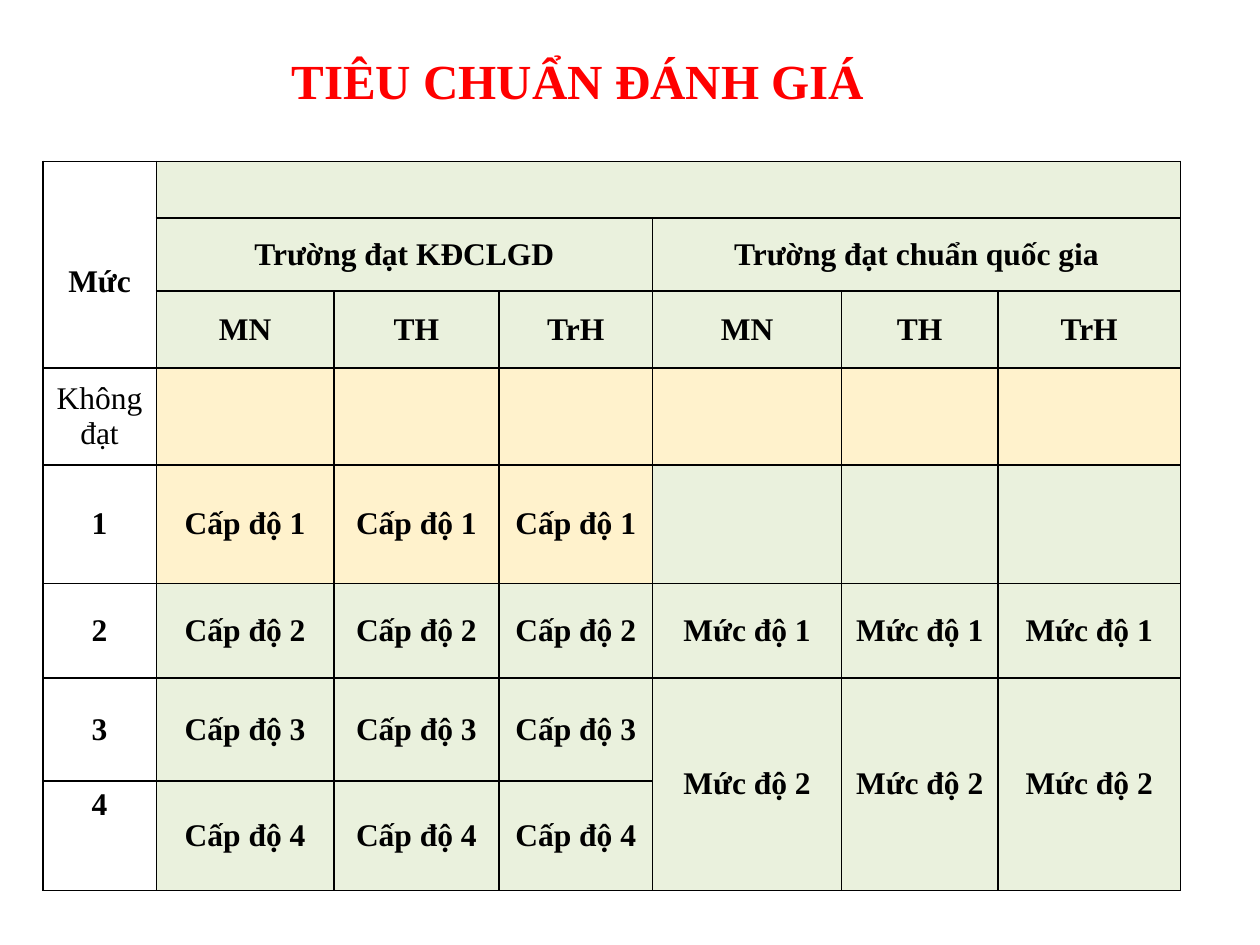
"""Build the slide with the table of school assessment standards."""
from dataclasses import dataclass
from typing import Any, NamedTuple

from lxml.etree import SubElement
from pptx import Presentation
from pptx.dml.color import RGBColor
from pptx.enum.text import MSO_ANCHOR, PP_ALIGN
from pptx.oxml.ns import qn
from pptx.util import Inches, Pt


@dataclass(frozen=True)
class Theme:
    face: str = "Times New Roman"
    head: Any = Pt(28)
    body: Any = Pt(18)
    rule: Any = Pt(1)
    red: str = "FF0000"
    ink: str = "000000"
    green: str = "EAF1DD"
    cream: str = "FFF2CC"


class Span(NamedTuple):
    row: int
    col: int
    rows: int
    cols: int


class Pad(NamedTuple):
    left: float = 0.07
    top: float = 0
    right: float = 0.07
    bottom: float = 0


THEME = Theme()
WIDTHS = (0.9, 1.41, 1.31, 1.22, 1.5, 1.24, 1.45)
HEIGHTS = (0.45, 0.58, 0.61, 0.77, 0.94, 0.75, 0.82, 0.87)
LEVELS = ["MN", "TH", "TrH"]
GAP = [""] * 3
ROWS = [
    ["Mức", *GAP, *GAP],
    ["", "Trường đạt KĐCLGD", "", "", "Trường đạt chuẩn quốc gia", "", ""],
    ["", *LEVELS, *LEVELS],
    ["Không đạt", *GAP, *GAP],
    ["1", *["Cấp độ 1"] * 3, *GAP],
    ["2", *["Cấp độ 2"] * 3, *["Mức độ 1"] * 3],
    ["3", *["Cấp độ 3"] * 3, *["Mức độ 2"] * 3],
    ["4", *["Cấp độ 4"] * 3, *GAP],
]
SPANS = [Span(0, 0, 3, 1), Span(0, 1, 1, 6), Span(1, 1, 1, 3), Span(1, 4, 1, 3)]
SPANS += [Span(6, col, 2, 1) for col in (4, 5, 6)]
PADS = {"Mức": Pad(top=0.28), "4": Pad(0.1, 0.05, 0.1, 0.05)}


def apply(item: Any, style: dict[str, Any]) -> None:
    for name, value in style.items():
        setattr(item, name, value)


def write(frame: Any, text: str, size: Any, color: str, bold: bool = True) -> None:
    line = frame.paragraphs[0]
    line.alignment = PP_ALIGN.CENTER
    run = line.add_run()
    run.text = text
    apply(run.font, {"name": THEME.face, "size": size, "bold": bold})
    run.font.color.rgb = RGBColor.from_string(color)


def edge(cell: Any) -> None:
    props = cell._tc.get_or_add_tcPr()
    for side in ("lnL", "lnR", "lnT", "lnB"):
        line = SubElement(props, qn(f"a:{side}"), w=str(int(THEME.rule)))
        fill = SubElement(line, qn("a:solidFill"))
        SubElement(fill, qn("a:srgbClr"), val=THEME.ink)


def paint(cell: Any, row: int, col: int) -> None:
    if col == 0:
        cell.fill.background()
        return
    cream = row == 3 or (row == 4 and col <= 3)
    cell.fill.solid()
    cell.fill.fore_color.rgb = RGBColor.from_string(THEME.cream if cream else THEME.green)


def fill_cell(cell: Any, row: int, col: int, text: str) -> None:
    edge(cell)
    paint(cell, row, col)
    pad = PADS.get(text, Pad())
    apply(cell, {f"margin_{side}": Inches(size) for side, size in pad._asdict().items()})
    cell.vertical_anchor = MSO_ANCHOR.TOP if text == "4" else MSO_ANCHOR.MIDDLE
    if text:
        write(cell.text_frame, text, THEME.body, THEME.ink, text != "Không đạt")


def add_title(slide: Any) -> None:
    box = slide.shapes.add_textbox(Inches(0.5), Inches(0.3), Inches(8.17), Inches(0.72))
    frame = box.text_frame
    apply(frame, {"word_wrap": True, "vertical_anchor": MSO_ANCHOR.MIDDLE})
    write(frame, "TIÊU CHUẨN ĐÁNH GIÁ", THEME.head, THEME.red)
    frame.paragraphs[0].line_spacing = 0.9


def add_grid(slide: Any) -> None:
    table = slide.shapes.add_table(
        len(HEIGHTS), len(WIDTHS), Inches(0.34), Inches(1.28),
        Inches(sum(WIDTHS)), Inches(sum(HEIGHTS)),
    ).table
    apply(table, {"first_row": False, "horz_banding": False})
    for col, width in zip(table.columns, WIDTHS):
        col.width = Inches(width)
    for row, height in zip(table.rows, HEIGHTS):
        row.height = Inches(height)
    for row, texts in enumerate(ROWS):
        for col, text in enumerate(texts):
            fill_cell(table.cell(row, col), row, col, text)
    for span in SPANS:
        end = table.cell(span.row + span.rows - 1, span.col + span.cols - 1)
        table.cell(span.row, span.col).merge(end)


def main() -> None:
    deck = Presentation()
    apply(deck, {"slide_width": Inches(10), "slide_height": Inches(7.5)})
    slide = deck.slides.add_slide(deck.slide_layouts[6])
    add_title(slide)
    add_grid(slide)
    deck.save("out.pptx")


if __name__ == "__main__":
    main()
